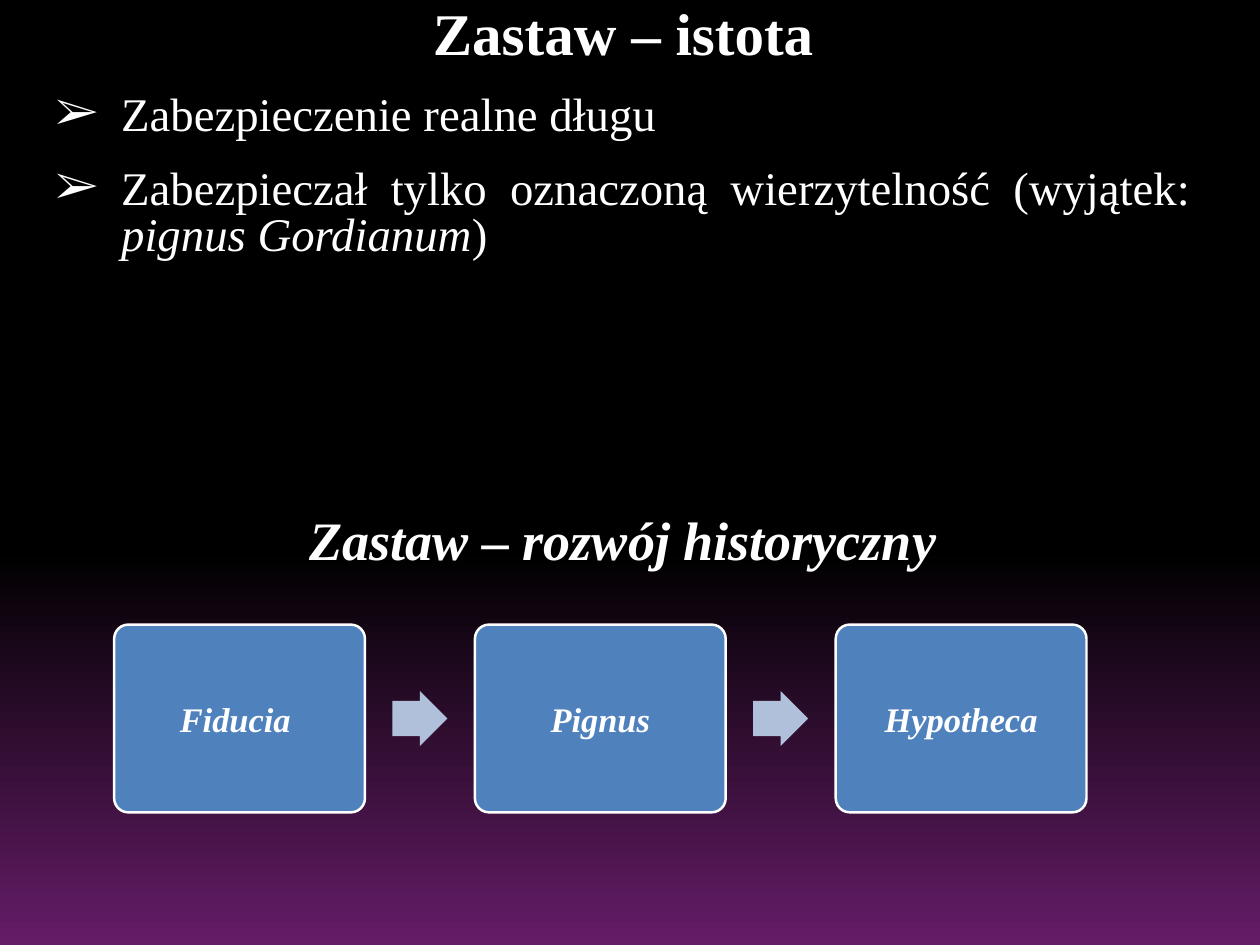
from lxml.etree import SubElement
from pptx import Presentation
from pptx.dml.color import RGBColor
from pptx.enum.shapes import MSO_SHAPE
from pptx.enum.text import MSO_ANCHOR, PP_ALIGN
from pptx.oxml.ns import qn
from pptx.util import Pt

FONT = "Times New Roman"
WHITE = "FFFFFF"


def color(hex_code):
    return RGBColor.from_string(hex_code)


def add_run(paragraph, text, size, bold=False, italic=False):
    run = paragraph.add_run()
    run.text = text
    run.font.name = FONT
    run.font.size = Pt(size)
    run.font.bold = bold
    run.font.italic = italic
    run.font.color.rgb = color(WHITE)


prs = Presentation()
prs.slide_width, prs.slide_height = Pt(1024), Pt(768)
slide = prs.slides.add_slide(prs.slide_layouts[6])

# Background: black fading to purple at the bottom
background = slide.background.fill
background.gradient()
background.gradient_angle = 270
for stop, (position, shade) in zip(background.gradient_stops, [(0.58, "000000"), (1, "641C66")]):
    stop.position = position
    stop.color.rgb = color(shade)

# Title with bullet points, then the second heading
essence, history = [
    slide.shapes.add_textbox(Pt(40), Pt(top), Pt(933), Pt(height)).text_frame
    for top, height in [(2, 210), (406.5, 61)]
]
for frame in (essence, history):
    frame.word_wrap = True
    frame.margin_left = frame.margin_right = frame.margin_top = frame.margin_bottom = Pt(5)
    frame.paragraphs[0].alignment = PP_ALIGN.CENTER

title = essence.paragraphs[0]
title.line_spacing = 0.83
add_run(title, "Zastaw – istota", 48, bold=True)
add_run(history.paragraphs[0], "Zastaw – rozwój historyczny", 44, bold=True, italic=True)

points = [
    [("Zabezpieczenie realne długu", False)],
    [("Zabezpieczał tylko oznaczoną wierzytelność (wyjątek: ", False),
     ("pignus Gordianum", True), (")", False)],
]
for pieces in points:
    point = essence.add_paragraph()
    point.alignment = PP_ALIGN.JUSTIFY
    point.line_spacing = 0.83
    point.space_before = Pt(22)
    properties = point._p.get_or_add_pPr()
    properties.set("marL", str(Pt(53.5)))
    properties.set("indent", str(-Pt(53.5)))
    SubElement(properties, qn("a:buFont"), typeface=FONT)
    SubElement(properties, qn("a:buChar"), char="➢")
    for text, italic in pieces:
        add_run(point, text, 38, italic=italic)

# Historical stages joined by arrows
stages = ["Fiducia ", "Pignus", "Hypotheca"]
first_left, pitch = 92.8, 293.2
stage_top, stage_width, stage_height = 507.6, 203.8, 152.6
arrow_offset, arrow_size = 226, 44.8
for index, name in enumerate(stages):
    left = first_left + index * pitch
    stage = slide.shapes.add_shape(
        MSO_SHAPE.ROUNDED_RECTANGLE, Pt(left), Pt(stage_top), Pt(stage_width), Pt(stage_height))
    stage.adjustments[0] = 0.075
    stage.shadow.inherit = False
    stage.fill.solid()
    stage.fill.fore_color.rgb = color("4F81BD")
    stage.line.color.rgb = color(WHITE)
    stage.line.width = Pt(2)
    stage.text_frame.word_wrap = True
    stage.text_frame.vertical_anchor = MSO_ANCHOR.MIDDLE
    label = stage.text_frame.paragraphs[0]
    label.alignment = PP_ALIGN.CENTER
    add_run(label, name, 28, bold=True, italic=True)

    if index < len(stages) - 1:
        arrow = slide.shapes.add_shape(
            MSO_SHAPE.RIGHT_ARROW, Pt(left + arrow_offset),
            Pt(stage_top + (stage_height - arrow_size) / 2), Pt(arrow_size), Pt(arrow_size))
        arrow.adjustments[0] = 0.64
        arrow.shadow.inherit = False
        arrow.fill.solid()
        arrow.fill.fore_color.rgb = color("B1C0DA")
        arrow.line.fill.background()

prs.save("out.pptx")
